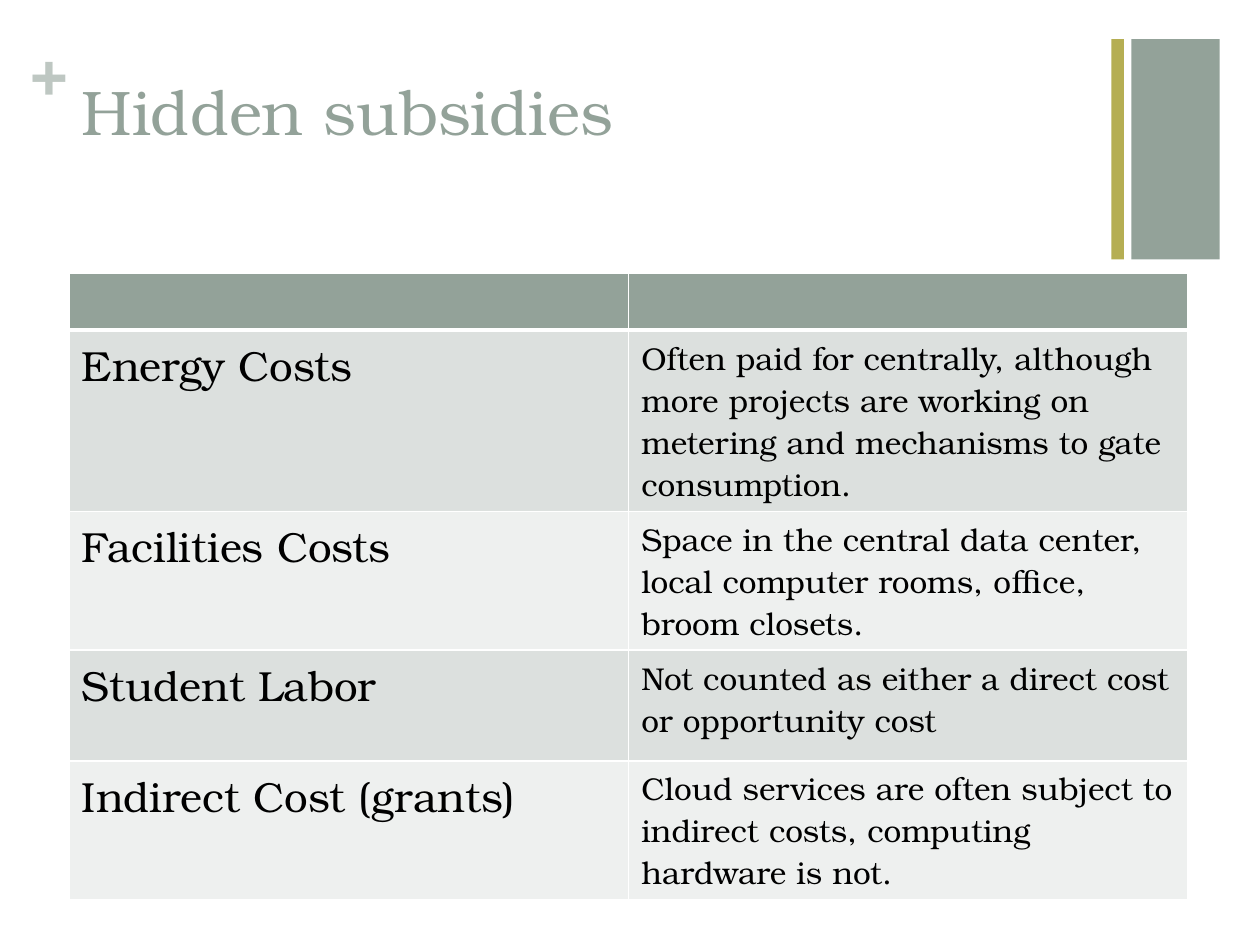
"""Build the slide on hidden subsidies: a title, two side bars and a cost table."""
from lxml import etree
from pptx import Presentation
from pptx.dml.color import RGBColor
from pptx.enum.shapes import MSO_SHAPE
from pptx.enum.text import MSO_ANCHOR
from pptx.oxml.ns import qn
from pptx.util import Inches, Pt

RECT = MSO_SHAPE.RECTANGLE
TOP = MSO_ANCHOR.TOP
FONT = "TeX Gyre Bonum"
COLORS = {"sage": "93A299", "pale": "BEC7C2", "olive": "B5AE53", "black": "000000",
          "white": "FFFFFF", "dark": "DCE0DE", "light": "EEF0EF"}

TITLE = "Hidden subsidies"
ROWS = [
    ("", ""),
    ("Energy Costs", "Often paid for centrally, although more projects are working on "
     "metering and mechanisms to gate consumption."),
    ("Facilities Costs", "Space in the central data center, local computer rooms, office, "
     "broom closets."),
    ("Student Labor", "Not counted as either a direct cost or opportunity cost"),
    ("Indirect Cost (grants)", "Cloud services are often subject to indirect costs, "
     "computing hardware is not."),
]
HEIGHTS = [0.45, 1.44, 1.1, 0.88, 1.1]
SIZES = (24, 18)
BARS = [(8.98, 0.7, "sage"), (8.82, 0.1, "olive")]
LEFT, COL = 0.55, 4.44


def color(name):
    return RGBColor.from_string(COLORS[name])


def write(frame, text, size=18, tint="black", bold=False):
    frame.word_wrap = True
    run = frame.paragraphs[0].add_run()
    run.text = text
    font = run.font
    font.name, font.size, font.bold = FONT, Pt(size), bold
    font.color.rgb = color(tint)


def add_text(slide, text, box, inset=(0.1, 0.05), **style):
    frame = slide.shapes.add_textbox(*map(Inches, box)).text_frame
    frame.margin_left = frame.margin_right = Inches(inset[0])
    frame.margin_top = frame.margin_bottom = Inches(inset[1])
    frame.vertical_anchor = TOP
    write(frame, text, **style)


def add_bar(slide, left, width, tint):
    bar = slide.shapes.add_shape(RECT, *map(Inches, (left, 0.31, width, 1.75)))
    bar.shadow.inherit = False
    bar.fill.solid()
    bar.fill.fore_color.rgb = color(tint)
    bar.line.fill.background()


def set_edges(cell, **widths):
    props = cell._tc.get_or_add_tcPr()
    for i, side in enumerate("LRTB"):
        line = etree.Element(qn(f"a:ln{side}"), w=str(Pt(widths.get(side, 1))))
        fill = etree.SubElement(line, qn("a:solidFill"))
        etree.SubElement(fill, qn("a:srgbClr"), val=COLORS["white"])
        props.insert(i, line)


def add_costs(slide):
    box = (LEFT, 2.17, 2 * COL, sum(HEIGHTS))
    table = slide.shapes.add_table(len(ROWS), 2, *map(Inches, box)).table
    for col in table.columns:
        col.width = Inches(COL)
    for r, (texts, height) in enumerate(zip(ROWS, HEIGHTS)):
        table.rows[r].height = Inches(height)
        tint = "sage" if r == 0 else ("light", "dark")[r % 2]
        edges = {0: {"B": 3}, 1: {"T": 3}}.get(r, {})
        for c, text in enumerate(texts):
            cell = table.cell(r, c)
            cell.fill.solid()
            cell.fill.fore_color.rgb = color(tint)
            set_edges(cell, **edges)
            if text:
                write(cell.text_frame, text, size=SIZES[c])


def main():
    deck = Presentation()
    deck.slide_width, deck.slide_height = Inches(10), Inches(7.5)
    slide = deck.slides.add_slide(deck.slide_layouts[6])
    for bar in BARS:
        add_bar(slide, *bar)
    add_text(slide, "+", (0.24, 0.25, 0.29, 0.61), inset=(0, 0),
             size=36, tint="pale", bold=True)
    add_text(slide, TITLE, (LEFT, 0.53, 8.26, 1.22), size=36, tint="sage")
    add_costs(slide)
    deck.save("out.pptx")


if __name__ == "__main__":
    main()
